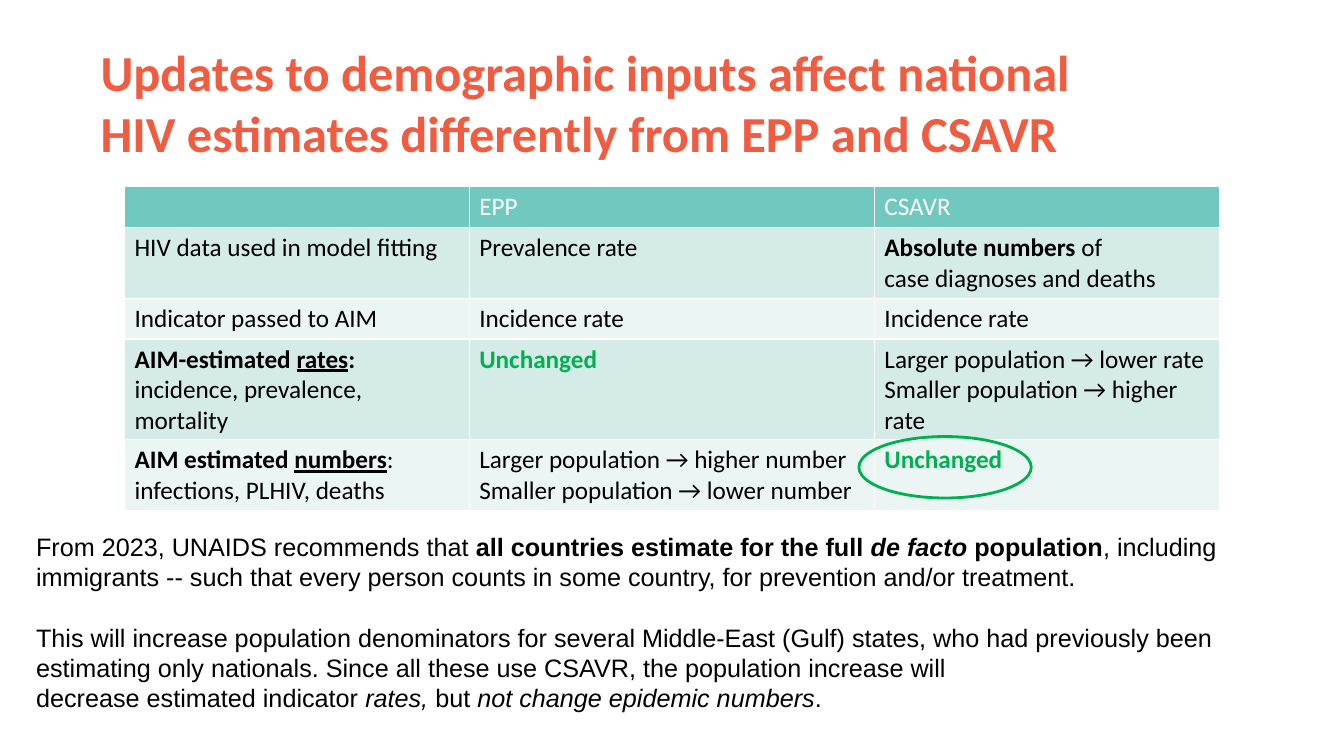
import pptx
import pptx.util
import pptx.dml.color
import pptx.enum.shapes

Pt = pptx.util.Pt
GREEN, WHITE, BLACK = "00B050", "FFFFFF", "000000"


def shade(hue):
    return pptx.dml.color.RGBColor.from_string(hue)


def write(frame, paras, font, size, hue, gap=0):
    """Each paragraph is a list of (text, marks); marks hold b, i, u."""
    frame.word_wrap = True
    for n, runs in enumerate(paras):
        par = frame.add_paragraph() if n else frame.paragraphs[0]
        if n and gap:
            par.space_before = Pt(gap)
        for text, marks in runs:
            for k, line in enumerate(text.split("\n")):
                if k:
                    par.add_line_break()
                if not line:
                    continue
                run = par.add_run()
                run.text = line
                run.font.name, run.font.size = font, Pt(size)
                run.font.color.rgb = shade(hue)
                run.font.bold = "b" in marks
                run.font.italic = "i" in marks
                run.font.underline = "u" in marks


deck = pptx.Presentation()
deck.slide_width, deck.slide_height = Pt(960), Pt(540)
slide = deck.slides.add_slide(deck.slide_layouts[6])
shapes = slide.shapes

# Title
title = shapes.add_textbox(Pt(64.8), Pt(26), Pt(806), Pt(94.5))
write(title.text_frame, [[(
    "Updates to demographic inputs affect national \n"
    "HIV estimates differently from EPP and CSAVR", "b")]],
    "Calibri", 36, "F15B40")

# Table: each cell is a list of paragraphs
same = [[("Unchanged", "b")]]
rate = [[("Incidence rate", "")]]
rows = [
    [[], [[("EPP", "")]], [[("CSAVR", "")]]],
    [[[("HIV data used in model fitting", "")]],
     [[("Prevalence rate", "")]],
     [[("Absolute numbers ", "b"), ("of \ncase diagnoses and deaths", "")]]],
    [[[("Indicator passed to AIM", "")]], rate, rate],
    [[[("AIM-estimated ", "b"), ("rates", "bu"), (":\n", "b"),
       ("incidence, prevalence, mortality", "")]],
     same,
     [[("Larger population → lower rate", "")],
      [("Smaller population → higher rate", "")]]],
    [[[("AIM estimated ", "b"), ("numbers", "bu"),
       (": infections, PLHIV, deaths", "")]],
     [[("Larger population → higher number", "")],
      [("Smaller population → lower number", "")]],
     same],
]
grid = shapes.add_table(5, 3, Pt(88.9), Pt(133.3), Pt(782), Pt(146)).table
for col, wide in zip(grid.columns, (246.3, 289.4, 246.3)):
    col.width = Pt(wide)
for r, row in enumerate(rows):
    fill = "70C8BE" if r == 0 else ("EBF5F4", "D5EBE8")[r % 2]
    for c, paras in enumerate(row):
        cell = grid.cell(r, c)
        cell.fill.solid()
        cell.fill.fore_color.rgb = shade(fill)
        hue = WHITE if r == 0 else GREEN if paras is same else BLACK
        write(cell.text_frame, paras, "Calibri", 18, hue)

# Recommendation below the table
note = shapes.add_textbox(Pt(18.7), Pt(376), Pt(914), Pt(138))
write(note.text_frame, [
    [("From 2023, UNAIDS recommends that ", ""),
     ("all countries estimate for the full ", "b"),
     ("de facto ", "bi"), ("population", "b"),
     (", including immigrants -- such that every person counts in some "
      "country, for prevention and/or treatment. ", "")],
    [("This will increase population denominators for several Middle-East "
      "(Gulf) states, who had previously been estimating only nationals. "
      "Since all these use CSAVR, the population increase will \n"
      "decrease estimated indicator ", ""),
     ("rates,", "i"), (" but ", ""),
     ("not change epidemic numbers", "i"), (".", "")],
], "Arial", 18, BLACK, gap=21.5)

# Ring around the unchanged numbers
ring = shapes.add_shape(pptx.enum.shapes.MSO_SHAPE.OVAL,
                        Pt(613.5), Pt(311.8), Pt(123.1), Pt(43.9))
ring.shadow.inherit = False
ring.fill.background()
ring.line.color.rgb = shade(GREEN)
ring.line.width = Pt(2)

deck.save("out.pptx")
